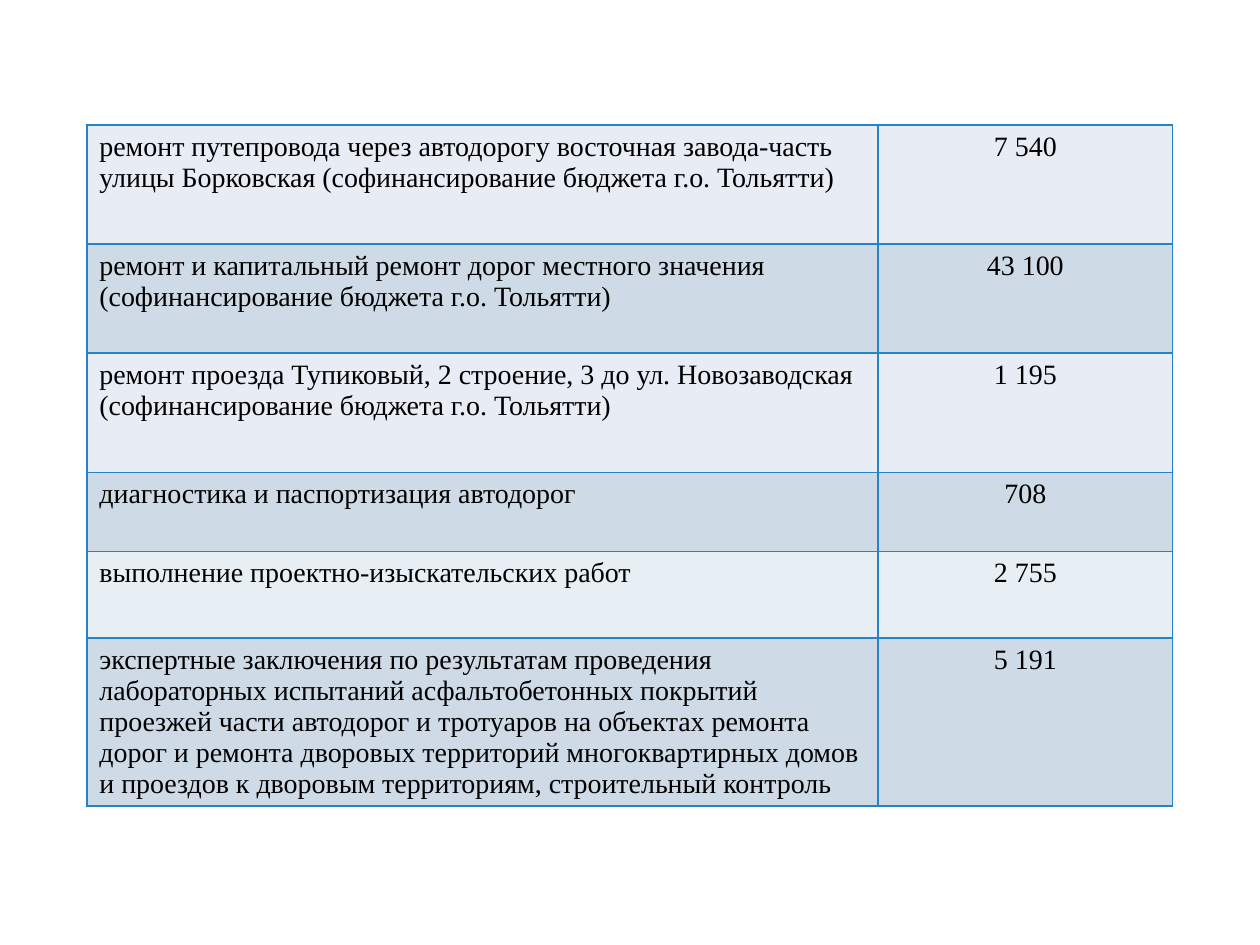
from dataclasses import dataclass

from lxml import etree
from pptx import Presentation
from pptx import util as u
from pptx.dml.color import RGBColor
from pptx.enum import text
from pptx.oxml import ns

COLORS = {
    "light": "E8EDF5",
    "pale": "E8EFF4",
    "dark": "CEDBE6",
    "border": "2683C6",
    "text": "000000",
}
FONT = "Times New Roman"
COLUMN_WIDTHS = (15.95, 5.94)


@dataclass
class Expense:
    work: str
    amount: str
    height: float
    fill: str


EXPENSES = [
    Expense("ремонт путепровода через автодорогу восточная завода-часть улицы Борковская "
            "(софинансирование бюджета г.о. Тольятти)", "7 540", 2.4, "light"),
    Expense("ремонт и капитальный ремонт дорог местного значения "
            "(софинансирование бюджета г.о. Тольятти)", "43 100", 2.2, "dark"),
    Expense("ремонт проезда Тупиковый, 2 строение, 3 до ул. Новозаводская "
            "(софинансирование бюджета г.о. Тольятти)", "1 195", 2.4, "light"),
    Expense("диагностика и паспортизация автодорог", "708", 1.6, "dark"),
    Expense("выполнение проектно-изыскательских работ", "2 755", 1.74, "pale"),
    Expense("экспертные заключения по результатам проведения лабораторных испытаний "
            "асфальтобетонных покрытий проезжей части автодорог и тротуаров на объектах "
            "ремонта дорог и ремонта дворовых территорий многоквартирных домов и проездов "
            "к дворовым территориям, строительный контроль", "5 191", 3.39, "dark"),
]


def add_borders(cell, color: str, width: float = 1) -> None:
    properties = cell._tc.get_or_add_tcPr()
    for side in ("a:lnL", "a:lnR", "a:lnT", "a:lnB"):
        line = etree.SubElement(properties, ns.qn(side), w=str(u.Pt(width)))
        fill = etree.SubElement(line, ns.qn("a:solidFill"))
        etree.SubElement(fill, ns.qn("a:srgbClr"), val=color)


def write_cell(cell, content: str, *, fill: str, align=text.PP_ALIGN.LEFT,
               size: float = 16) -> None:
    add_borders(cell, COLORS["border"])
    cell.fill.solid()
    cell.fill.fore_color.rgb = RGBColor.from_string(COLORS[fill])
    para = cell.text_frame.paragraphs[0]
    para.alignment = align
    span = para.add_run()
    span.text = content
    span.font.name = FONT
    span.font.size = u.Pt(size)
    span.font.color.rgb = RGBColor.from_string(COLORS["text"])


def add_expense_table(page, expenses: list[Expense], left: float, top: float) -> None:
    height = sum(expense.height for expense in expenses)
    table = page.shapes.add_table(
        len(expenses), len(COLUMN_WIDTHS), u.Cm(left), u.Cm(top),
        u.Cm(sum(COLUMN_WIDTHS)), u.Cm(height)).table
    table.first_row = False
    table.horz_banding = False
    for column, width in zip(table.columns, COLUMN_WIDTHS):
        column.width = u.Cm(width)
    for index, expense in enumerate(expenses):
        table.rows[index].height = u.Cm(expense.height)
        write_cell(table.cell(index, 0), expense.work, fill=expense.fill)
        write_cell(table.cell(index, 1), expense.amount, fill=expense.fill,
                   align=text.PP_ALIGN.CENTER)


def main() -> None:
    deck = Presentation()
    deck.slide_width = u.Cm(25.4)
    deck.slide_height = u.Cm(19.05)
    page = deck.slides.add_slide(deck.slide_layouts[6])
    add_expense_table(page, EXPENSES, left=1.75, top=2.52)
    deck.save("out.pptx")


if __name__ == "__main__":
    main()
